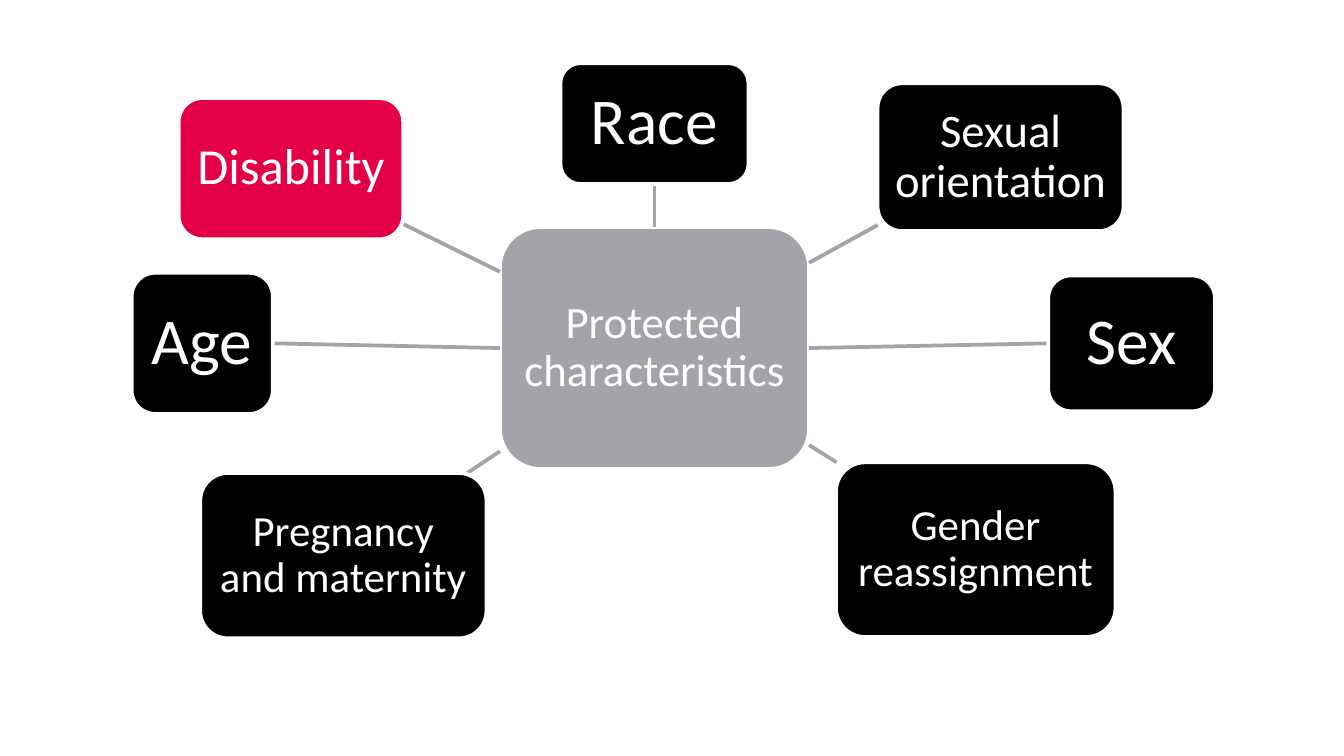
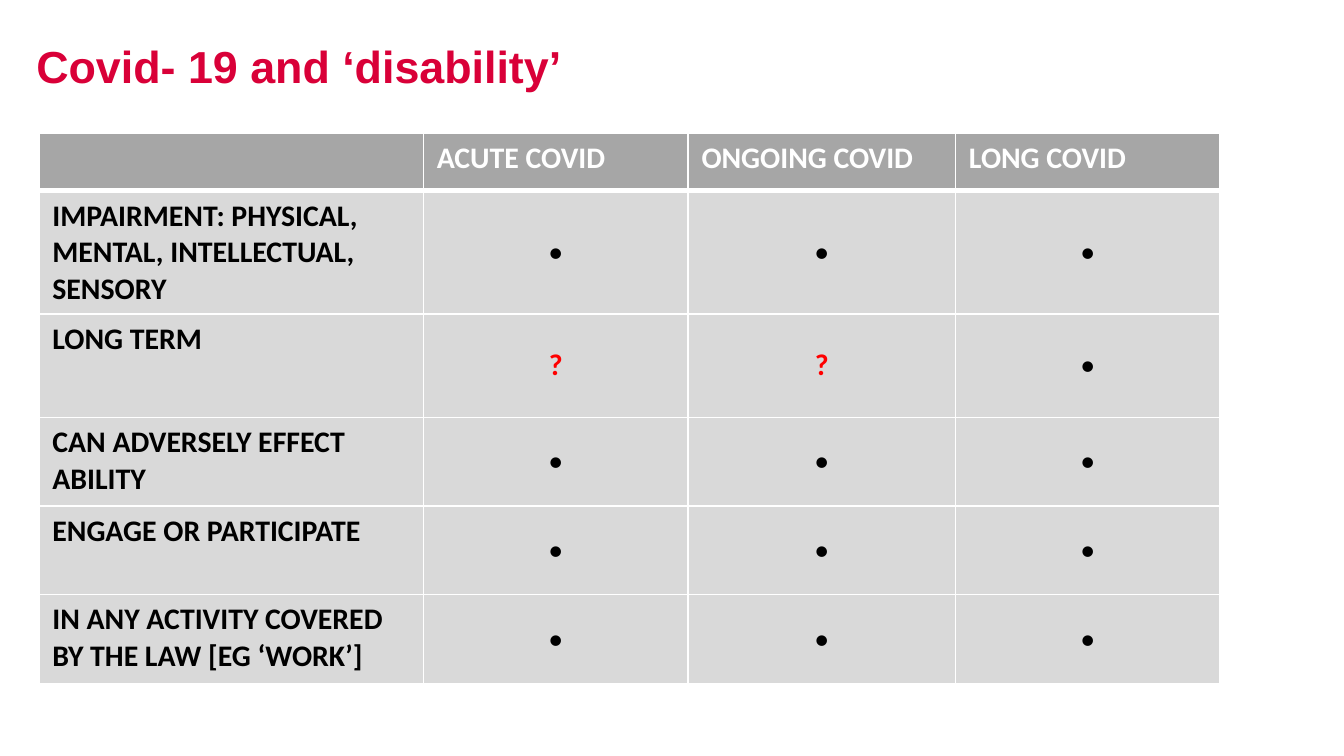
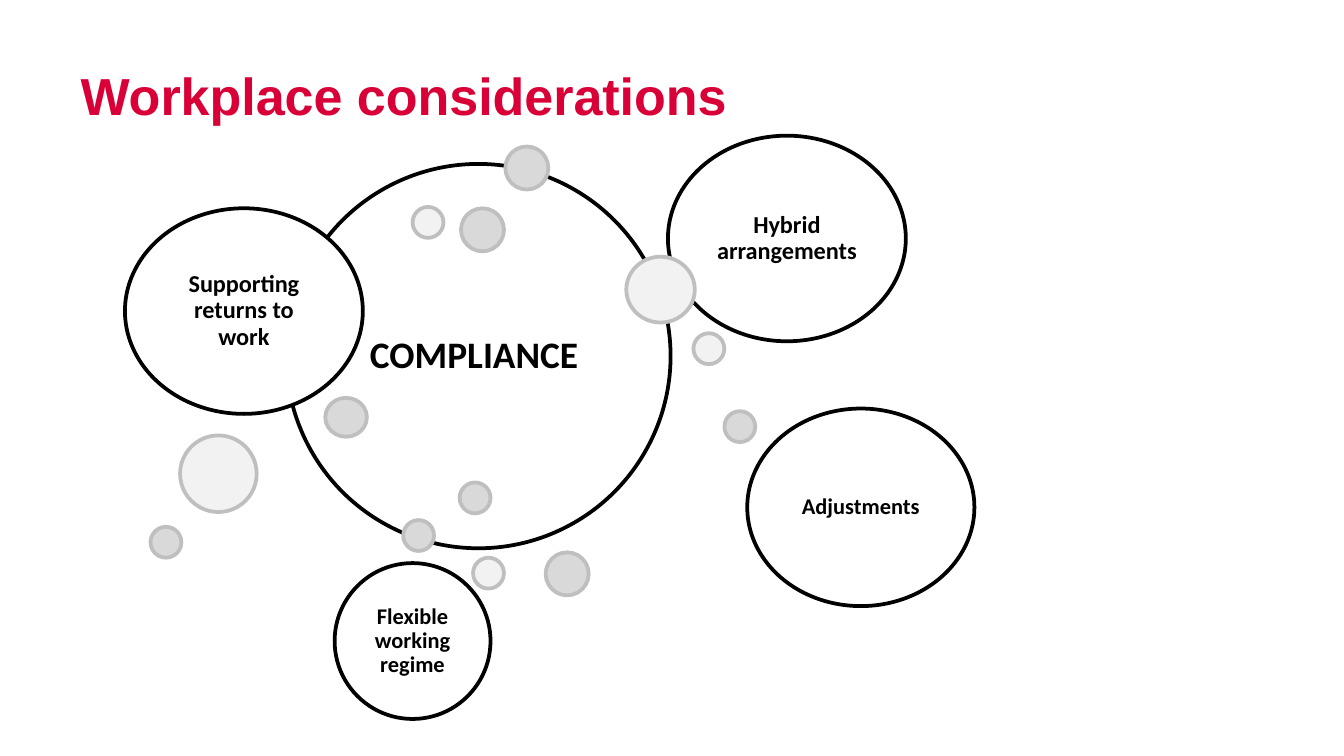
from lxml import etree
from pptx import Presentation
from pptx import util as u
from pptx.dml.color import RGBColor
from pptx.enum import shapes, text
from pptx.oxml.ns import qn

WHITE = RGBColor(0xFF, 0xFF, 0xFF)
BLACK = RGBColor(0, 0, 0)
RED = RGBColor(0xFF, 0, 0)
CRIMSON = RGBColor(0xD9, 0, 0x38)
PINK = RGBColor(0xE4, 0, 0x46)
HUB_GREY = RGBColor(0xA3, 0xA3, 0xA9)
HEADER_GREY = RGBColor(0xA6, 0xA6, 0xA6)
RING_GREY = RGBColor(0xBF, 0xBF, 0xBF)
CELL_GREY = RGBColor(0xD9, 0xD9, 0xD9)
PALE_GREY = RGBColor(0xF2, 0xF2, 0xF2)

SLIDE_WIDTH = u.Inches(10)
SLIDE_HEIGHT = SLIDE_WIDTH * 9 // 16
TITLE_ONLY, BLANK = 5, 6
TITLE_HEIGHT = 0.48
TOP, LEFT, BOTTOM, RIGHT = range(4)

# label, (left, top, width, height), size, inset, fill, joined sides (hub, box)
HUB = ("Protected characteristics", (3.72, 1.69, 2.3, 1.8), 24, 0.07, HUB_GREY)
CHARACTERISTICS = [
    ("Race", (4.17, 0.47, 1.4, 0.9), 35, 0.1, BLACK, (TOP, BOTTOM)),
    ("Sexual orientation", (6.53, 0.62, 1.83, 1.1), 25, 0.07, BLACK, None),
    ("Sex", (7.8, 2.05, 1.24, 1.01), 35, 0.1, BLACK, (RIGHT, LEFT)),
    ("Gender reassignment", (6.22, 3.44, 2.08, 1.3), 23, 0.06, BLACK, None),
    ("Pregnancy and maternity", (1.49, 3.52, 2.13, 1.23), 23, 0.06, BLACK, None),
    ("Age", (0.98, 2.03, 1.05, 1.05), 35, 0.1, BLACK, (LEFT, RIGHT)),
    ("Disability", (1.33, 0.73, 1.67, 1.05), 27, 0.07, PINK, None),
]

COVID_TITLE = ("Covid- 19 and ‘disability’", (0.17, 0.24, 9.64, TITLE_HEIGHT), 24)
COVID_TABLE = [
    ("", "ACUTE COVID", "ONGOING COVID", "LONG COVID"),
    ("IMPAIRMENT: PHYSICAL, MENTAL, INTELLECTUAL, SENSORY", "•", "•", "•"),
    ("LONG TERM", "?", "?", "•"),
    ("CAN ADVERSELY EFFECT ABILITY", "•", "•", "•"),
    ("ENGAGE OR PARTICIPATE", "•", "•", "•"),
    ("IN ANY ACTIVITY COVERED BY THE LAW [EG ‘WORK’]", "•", "•", "•"),
]
COLUMN_WIDTHS = (2.86, 1.97, 1.99, 1.97)
ROW_HEIGHTS = (0.43, 0.84, 0.77, 0.66, 0.66, 0.66)

WORKPLACE_TITLE = ("Workplace considerations", (0.5, 0.42, 8.98, TITLE_HEIGHT), 27.9)
BUBBLES = [
    ("COMPLIANCE ", (2.13, 1.22, 2.86, 2.86), 20, 0.08),
    ("Supporting returns to work", (0.93, 1.55, 1.77, 1.53), 13, 0.05),
    ("Hybrid arrangements", (4.97, 1.01, 1.77, 1.53), 13, 0.05),
    ("Adjustments", (5.56, 3.04, 1.69, 1.47), 12, 0.05),
    ("Flexible working regime", (2.49, 4.19, 1.16, 1.16), 12, 0.05),
]
SMALL, MEDIUM = (0.23, 0.23), (0.32, 0.32)
DOTS = [
    ((3.76, 1.09), MEDIUM, CELL_GREY),
    ((3, 3.87), SMALL, CELL_GREY),
    ((5.16, 2.48), SMALL, PALE_GREY),
    ((4.06, 4.11), MEDIUM, CELL_GREY),
    ((3.07, 1.54), SMALL, PALE_GREY),
    ((2.42, 2.96), (0.31, 0.29), CELL_GREY),
    ((3.43, 1.55), MEDIUM, CELL_GREY),
    ((1.34, 3.24), (0.57, 0.57), PALE_GREY),
    ((4.66, 1.91), (0.51, 0.49), PALE_GREY),
    ((1.12, 3.92), SMALL, CELL_GREY),
    ((3.42, 3.59), SMALL, CELL_GREY),
    ((5.39, 3.06), SMALL, CELL_GREY),
    ((3.52, 4.15), SMALL, PALE_GREY),
]


def inches(lengths):
    return [u.Inches(length) for length in lengths]


def set_font(paragraph, size, color, bold=False, name="Calibri"):
    font = paragraph.font
    font.name, font.size, font.bold = name, u.Pt(size), bold
    font.color.rgb = color


def add_title(slide, wording, place, size):
    title = slide.shapes.title
    title.left, title.top, title.width, title.height = inches(place)
    frame = title.text_frame
    frame.text = wording
    frame.vertical_anchor = text.MSO_ANCHOR.TOP
    frame.auto_size = text.MSO_AUTO_SIZE.NONE
    frame.paragraphs[0].alignment = text.PP_ALIGN.LEFT
    set_font(frame.paragraphs[0], size, CRIMSON, True, "Arial")


def add_outlined(slide, kind, place, fill, line):
    shape = slide.shapes.add_shape(kind, *inches(place))
    shape.shadow.inherit = False
    shape.fill.solid()
    shape.fill.fore_color.rgb = fill
    shape.line.color.rgb = line
    shape.line.width = u.Pt(2)
    return shape


def write_label(shape, label, size, inset, color, bold=False):
    frame = shape.text_frame
    frame.word_wrap = True
    frame.vertical_anchor = text.MSO_ANCHOR.MIDDLE
    frame.margin_left = frame.margin_right = u.Inches(inset)
    frame.margin_top = frame.margin_bottom = u.Inches(inset)
    frame.text = label
    paragraph = frame.paragraphs[0]
    paragraph.alignment = text.PP_ALIGN.CENTER
    paragraph.line_spacing = 0.9
    set_font(paragraph, size, color, bold)


def add_box(slide, label, place, size, inset, fill):
    box = add_outlined(slide, shapes.MSO_SHAPE.ROUNDED_RECTANGLE, place, fill, WHITE)
    write_label(box, label, size, inset, WHITE)
    return box


def center(place):
    left, top, width, height = place
    return left + width / 2, top + height / 2


def edge_point(place, target):
    """Where the line from the centre of a rectangle to target leaves it."""
    x, y = center(place)
    dx, dy = target[0] - x, target[1] - y
    share = min(side / 2 / abs(d) for side, d in zip(place[2:], (dx, dy)) if abs(d) > 0.001)
    return x + dx * share, y + dy * share


def add_spoke(slide, hub_place, place):
    ends = edge_point(hub_place, center(place)) + edge_point(place, center(hub_place))
    spoke = slide.shapes.add_connector(shapes.MSO_CONNECTOR.STRAIGHT, *inches(ends))
    spoke.line.color.rgb = HUB_GREY
    spoke.line.width = u.Pt(2)
    etree.SubElement(spoke._element.spPr, qn("a:effectLst"))
    return spoke


def set_borders(cell, bottom_width):
    properties = cell._tc.get_or_add_tcPr()
    widths = {"lnL": 1, "lnR": 1, "lnT": 1, "lnB": bottom_width}
    for position, (tag, width) in enumerate(widths.items()):
        line = etree.Element(qn(f"a:{tag}"), w=str(u.Pt(width)))
        fill = etree.SubElement(line, qn("a:solidFill"))
        etree.SubElement(fill, qn("a:srgbClr"), val=str(WHITE))
        properties.insert(position, line)


def build_characteristics(slide):
    hub = add_box(slide, *HUB)
    for *box_details, sides in CHARACTERISTICS:
        spoke = add_spoke(slide, HUB[1], box_details[1])
        box = add_box(slide, *box_details)
        if sides:
            spoke.begin_connect(hub, sides[0])
            spoke.end_connect(box, sides[1])


def build_covid_table(slide):
    add_title(slide, *COVID_TITLE)
    place = (0.29, 0.99, sum(COLUMN_WIDTHS), sum(ROW_HEIGHTS))
    table = slide.shapes.add_table(len(ROW_HEIGHTS), len(COLUMN_WIDTHS), *inches(place)).table
    for column, width in zip(table.columns, COLUMN_WIDTHS):
        column.width = u.Inches(width)
    for row, height in zip(table.rows, ROW_HEIGHTS):
        row.height = u.Inches(height)
    for row, wordings in enumerate(COVID_TABLE):
        for column, wording in enumerate(wordings):
            header, mark = row == 0, row > 0 and column > 0
            cell = table.cell(row, column)
            cell.text = wording
            cell.fill.solid()
            cell.fill.fore_color.rgb = HEADER_GREY if header else CELL_GREY
            set_borders(cell, 3 if header else 1)
            paragraph = cell.text_frame.paragraphs[0]
            if mark:
                cell.vertical_anchor = text.MSO_ANCHOR.MIDDLE
                paragraph.alignment = text.PP_ALIGN.CENTER
            color = WHITE if header else RED if wording == "?" else BLACK
            set_font(paragraph, 16, color, wording != "•")


def build_workplace(slide):
    add_title(slide, *WORKPLACE_TITLE)
    for label, place, size, inset in BUBBLES:
        bubble = add_outlined(slide, shapes.MSO_SHAPE.OVAL, place, WHITE, BLACK)
        write_label(bubble, label, size, inset, BLACK, True)
    for corner, size, shade in DOTS:
        add_outlined(slide, shapes.MSO_SHAPE.OVAL, corner + size, shade, RING_GREY)


def main():
    presentation = Presentation()
    presentation.slide_width, presentation.slide_height = SLIDE_WIDTH, SLIDE_HEIGHT
    for layout, build in ((BLANK, build_characteristics), (TITLE_ONLY, build_covid_table),
                          (TITLE_ONLY, build_workplace)):
        build(presentation.slides.add_slide(presentation.slide_layouts[layout]))
    presentation.save("out.pptx")


if __name__ == "__main__":
    main()
